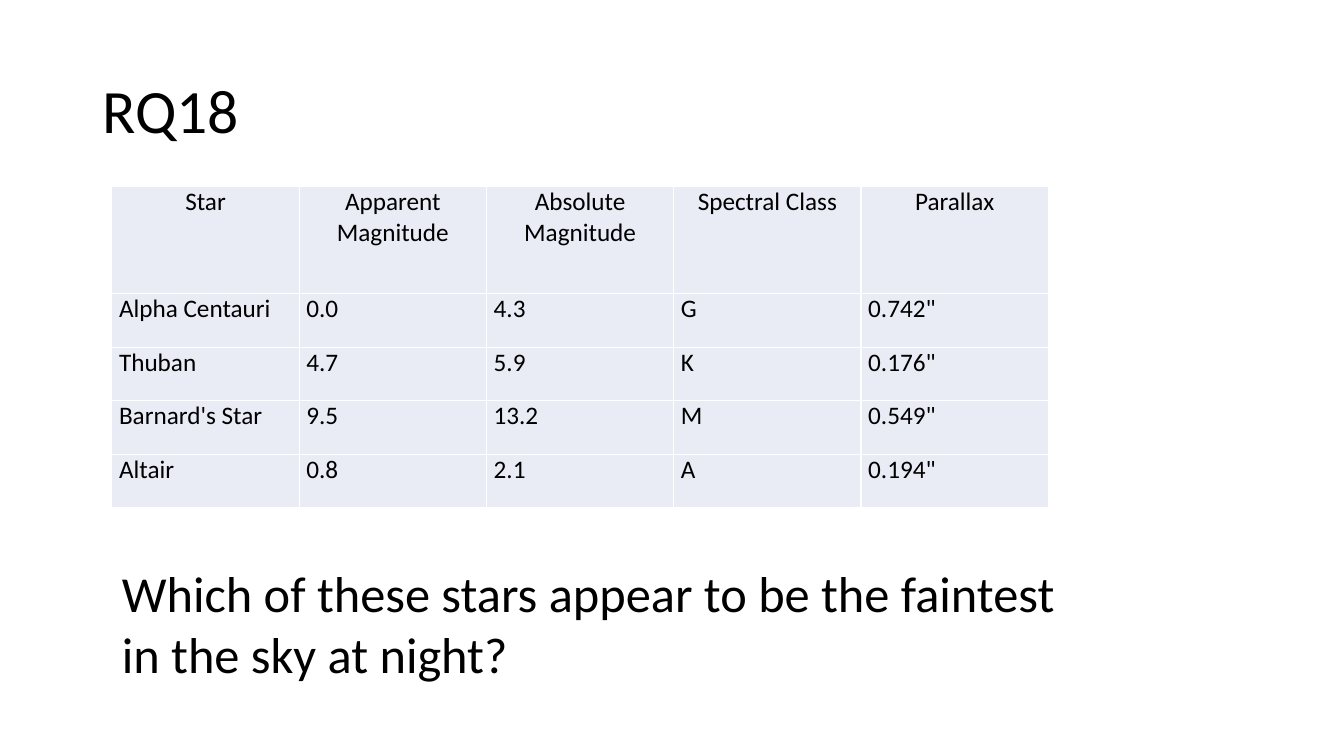
from lxml import etree
from pptx import Presentation, util as u
from pptx.dml.color import RGBColor
from pptx.enum import text
from pptx.oxml import ns

Cm = u.Cm
COLORS = {"text": "000000", "cell": "E9EBF5", "border": "FFFFFF"}
STARS = [
    ("Star", "Apparent Magnitude", "Absolute Magnitude", "Spectral Class", "Parallax"),
    ("Alpha Centauri", "0.0", "4.3", "G", '0.742"'),
    ("Thuban", "4.7", "5.9", "K", '0.176"'),
    ("Barnard's Star", "9.5", "13.2", "M", '0.549"'),
    ("Altair", "0.8", "2.1", "A", '0.194"'),
]
COL_WIDTH, HEADER_HEIGHT, ROW_HEIGHT = Cm(4.72), Cm(2.7), Cm(1.35)


def write(tf, words, size, align=text.PP_ALIGN.LEFT, spacing=None):
    tf.word_wrap = True
    p = tf.paragraphs[0]
    p.alignment = align
    p.line_spacing = spacing
    r = p.add_run()
    r.text = words
    r.font.name = "Calibri"
    r.font.size = u.Pt(size)
    r.font.color.rgb = RGBColor.from_string(COLORS["text"])


def add_borders(cell):
    tc_pr = cell._tc.get_or_add_tcPr()
    for side in ("lnL", "lnR", "lnT", "lnB"):
        line = etree.SubElement(tc_pr, ns.qn(f"a:{side}"), w=str(u.Pt(1)))
        fill = etree.SubElement(line, ns.qn("a:solidFill"))
        etree.SubElement(fill, ns.qn("a:srgbClr"), val=COLORS["border"])


prs = Presentation()
prs.slide_width, prs.slide_height = Cm(33.87), Cm(19.05)
s = prs.slides.add_slide(prs.slide_layouts[6])

title = s.shapes.add_textbox(Cm(2.33), Cm(1.01), Cm(29.21), Cm(3.68))
title.text_frame.vertical_anchor = text.MSO_ANCHOR.MIDDLE
write(title.text_frame, "RQ18", 44, spacing=0.9)

n_rows, n_cols = len(STARS), len(STARS[0])
frame = s.shapes.add_table(n_rows, n_cols, Cm(2.82), Cm(4.7), COL_WIDTH * n_cols,
                           HEADER_HEIGHT + ROW_HEIGHT * (n_rows - 1))
table = frame.table
table.horz_banding = False
for column in table.columns:
    column.width = COL_WIDTH
for i, values in enumerate(STARS):
    table.rows[i].height = ROW_HEIGHT if i else HEADER_HEIGHT
    for j, value in enumerate(values):
        cell = table.cell(i, j)
        cell.margin_left = cell.margin_right = Cm(0.18)
        cell.margin_top = cell.margin_bottom = 0
        add_borders(cell)
        cell.fill.solid()
        cell.fill.fore_color.rgb = RGBColor.from_string(COLORS["cell"])
        align = text.PP_ALIGN.LEFT if i else text.PP_ALIGN.CENTER
        write(cell.text_frame, value, 18, align=align)
        cell.text_frame.paragraphs[0].runs[0].font.bold = False

question = s.shapes.add_textbox(Cm(2.82), Cm(14.05), Cm(24.61), Cm(3.33))
write(question.text_frame,
      "Which of these stars appear to be the faintest in the sky at night?", 36)

prs.save("out.pptx")
